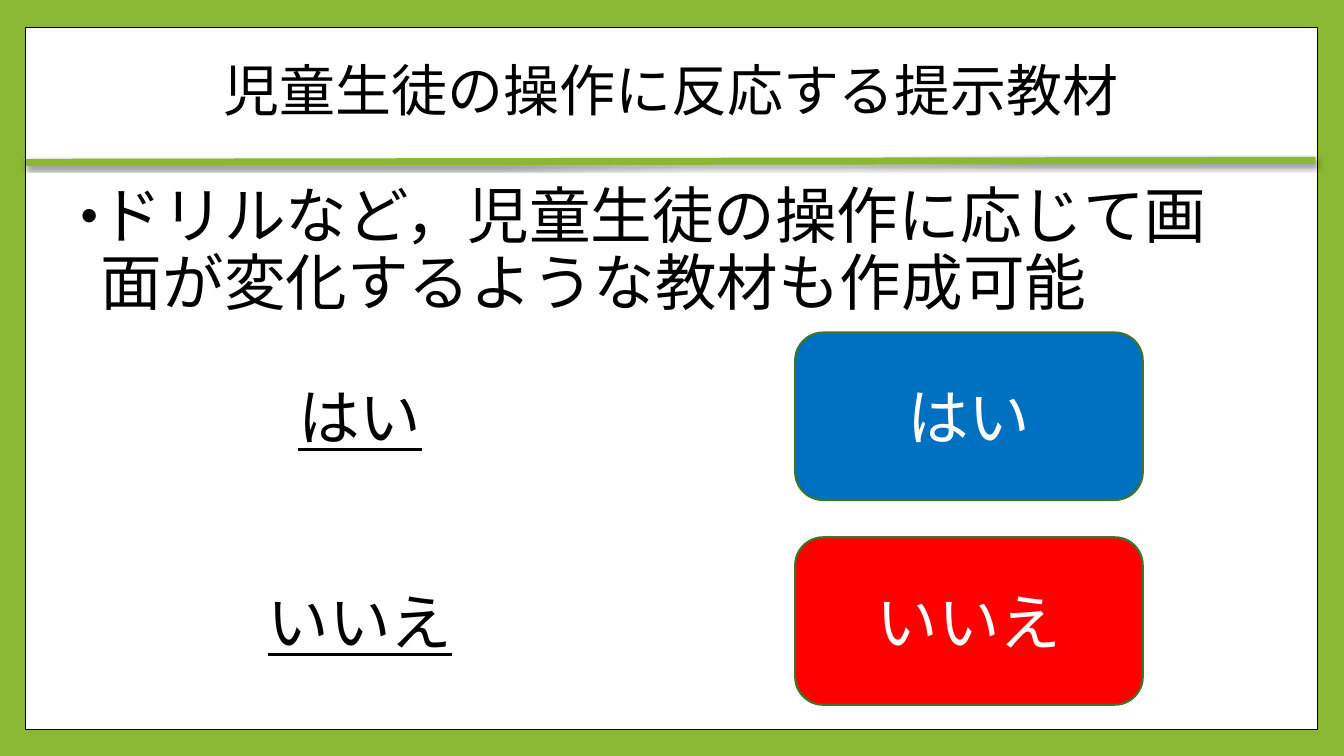
from lxml.etree import SubElement
from pptx import Presentation
from pptx.dml.color import RGBColor
from pptx.enum.lang import MSO_LANGUAGE_ID as Lang
from pptx.enum.shapes import MSO_CONNECTOR as Connector, MSO_SHAPE as Shape
from pptx.enum.text import MSO_ANCHOR as Anchor, MSO_AUTO_SIZE as AutoSize, PP_ALIGN as Align
from pptx.oxml import parse_xml
from pptx.oxml.ns import nsdecls, qn
from pptx.util import Cm, Pt

COLORS = {"green": "8AB833", "paper": "FFFFFF", "ink": "000000",
          "edge": "3E752A", "yes": "0070C0", "no": "FF0000"}


class LessonSlide:
    """Holds the deck style and draws each kind of element on one slide."""

    heading_font, body_font, text_size = "Lato", "Arial", 44

    def __init__(self, deck):
        self.slide = deck.slides.add_slide(deck.slide_layouts[1])
        background = self.slide.background.fill
        background.solid()
        background.fore_color.rgb = self.color("green")

    def color(self, name):
        return RGBColor.from_string(COLORS[name])

    def add_words(self, paragraph, words, font, color="ink", size=text_size, underline=None):
        run = paragraph.add_run()
        run.text = words
        run.font.name, run.font.size = font, Pt(size)
        run.font.color.rgb = self.color(color)
        run.font.underline = underline
        run.font.language_id = Lang.JAPANESE

    def box(self, kind, left, top, width, height, fill, edge, weight):
        box = self.slide.shapes.add_shape(kind, Cm(left), Cm(top), Cm(width), Cm(height))
        box.shadow.inherit = False
        box.fill.solid()
        box.fill.fore_color.rgb = self.color(fill)
        box.line.color.rgb = self.color(edge)
        box.line.width = Pt(weight)
        return box

    def rule(self, left, top, right, bottom):
        rule = self.slide.shapes.add_connector(
            Connector.STRAIGHT, Cm(left), Cm(top), Cm(right), Cm(bottom))
        rule.line.color.rgb = self.color("green")
        rule.line.width = Pt(5)
        rule._element.spPr.append(parse_xml(
            f'<a:effectLst {nsdecls("a")}><a:outerShdw blurRad="{Pt(3)}" dist="{Pt(2)}" '
            f'dir="5400000" rotWithShape="0"><a:srgbClr val="{COLORS["ink"]}">'
            '<a:alpha val="45000"/></a:srgbClr></a:outerShdw></a:effectLst>'))

    def place(self, holder, left, top, width, height, anchor):
        holder.left, holder.top = Cm(left), Cm(top)
        holder.width, holder.height = Cm(width), Cm(height)
        holder._element.getparent().append(holder._element)
        frame = holder.text_frame
        frame.word_wrap, frame.auto_size = True, AutoSize.NONE
        frame.vertical_anchor = anchor
        paragraph = frame.paragraphs[0]
        paragraph.line_spacing, paragraph.space_before = 0.9, Pt(0)
        return paragraph

    def title(self, words):
        heading = self.place(self.slide.shapes.title, 0.66, 0.91, 32.51, 2.9, Anchor.MIDDLE)
        heading.alignment = Align.CENTER
        self.add_words(heading, words, self.heading_font, size=40)

    def bullet(self, words):
        point = self.place(self.slide.placeholders[1], 1.65, 4.55, 30.48, 13.56, Anchor.TOP)
        properties = point._p.get_or_add_pPr()
        properties.set("marL", str(Cm(0.64)))
        properties.set("indent", str(Cm(-0.51)))
        bullet_color = SubElement(properties, qn("a:buClr"))
        SubElement(bullet_color, qn("a:srgbClr"), val=COLORS["ink"])
        SubElement(properties, qn("a:buSzPct"), val="80000")
        SubElement(properties, qn("a:buFont"), typeface="Arial")
        SubElement(properties, qn("a:buChar"), char="•")
        self.add_words(point, words, self.body_font)

    def label(self, words, center, top):
        width = 0.56 + 1.55 * len(words)
        label = self.slide.shapes.add_textbox(
            Cm(center - width / 2), Cm(top), Cm(width), Cm(2.13))
        label.text_frame.word_wrap = False
        label.text_frame.auto_size = AutoSize.SHAPE_TO_FIT_TEXT
        self.add_words(label.text_frame.paragraphs[0], words, self.heading_font, underline=True)

    def button(self, words, top, fill):
        button = self.box(Shape.ROUNDED_RECTANGLE, 20.04, top, 8.76, 4.22, fill, "edge", 1.5)
        button.text_frame.vertical_anchor = Anchor.MIDDLE
        caption = button.text_frame.paragraphs[0]
        caption.alignment = Align.CENTER
        self.add_words(caption, words, self.heading_font, "paper")


def main():
    deck = Presentation()
    deck.slide_width, deck.slide_height = Cm(33.87), Cm(19.05)
    lesson = LessonSlide(deck)
    lesson.box(Shape.RECTANGLE, 0.64, 0.69, 32.56, 17.7, "paper", "ink", 1)
    lesson.rule(0.66, 4.09, 33.15, 4.04)
    lesson.title("児童生徒の操作に反応する提示教材")
    lesson.bullet("ドリルなど，児童生徒の操作に応じて画面が変化するような教材も作成可能")
    for row, (answer, fill) in enumerate((("はい", "yes"), ("いいえ", "no"))):
        top = 8.38 + 5.16 * row
        lesson.label(answer, 9.1, top + 1.04)
        lesson.button(answer, top, fill)
    deck.save("out.pptx")


if __name__ == "__main__":
    main()
